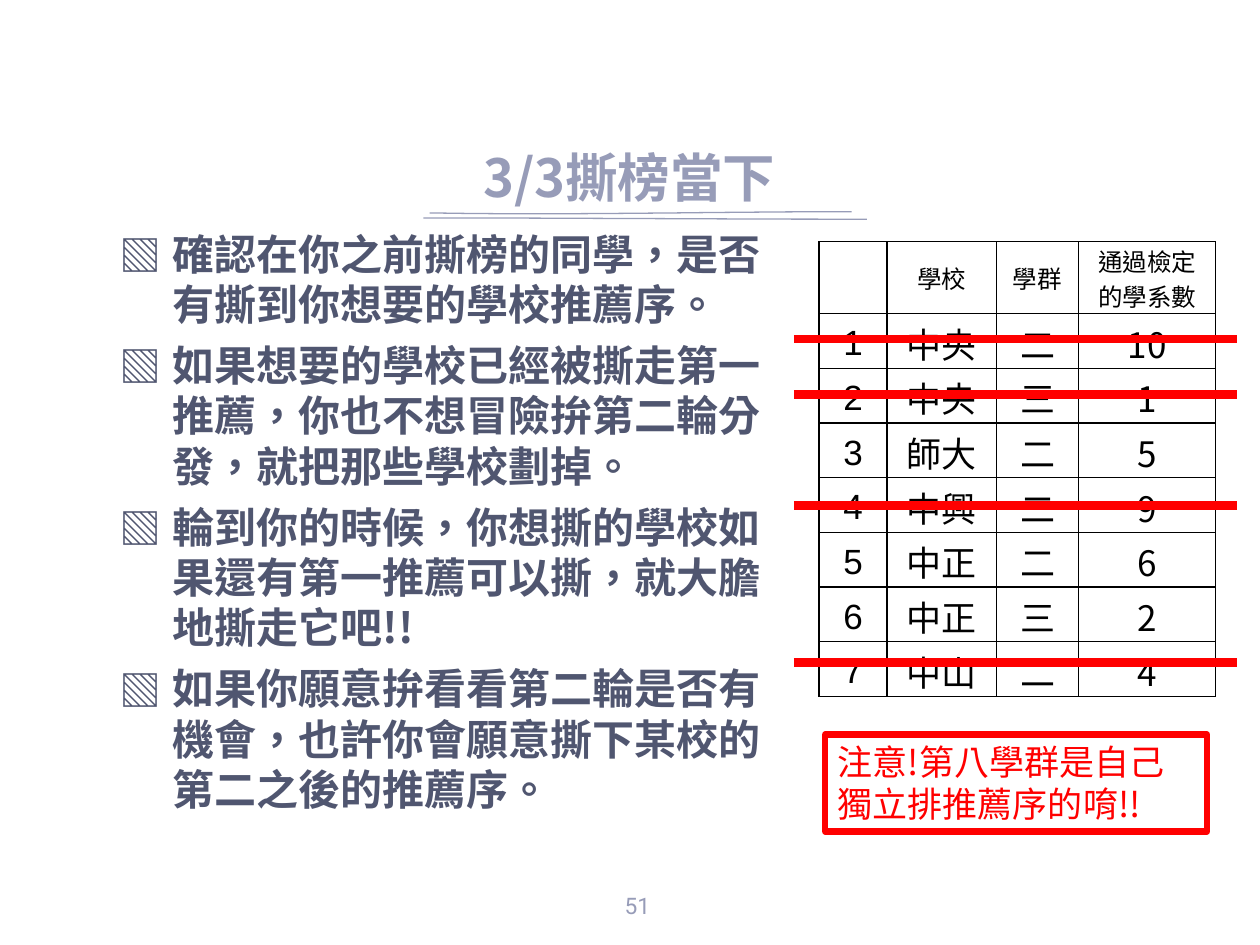
from dataclasses import dataclass

from lxml.etree import SubElement
from pptx import Presentation
from pptx.dml.color import RGBColor
from pptx.enum.shapes import MSO_CONNECTOR, MSO_SHAPE
from pptx.enum.text import MSO_ANCHOR, PP_ALIGN
from pptx.oxml.ns import qn
from pptx.util import Inches, Pt


@dataclass(frozen=True)
class Theme:
    accent: str = "979CB8"
    body: str = "505670"
    ink: str = "000000"
    paper: str = "FFFFFF"
    alert: str = "FF0000"
    cjk: str = "Noto Sans CJK SC"
    latin: str = "Arial"
    number: str = "Roboto"
    title_size: float = 30
    body_size: float = 24
    cell_size: float = 20
    head_size: float = 14
    page_size: float = 13


THEME = Theme()
BULLETS = [
    "確認在你之前撕榜的同學，是否有撕到你想要的學校推薦序。",
    "如果想要的學校已經被撕走第一推薦，你也不想冒險拚第二輪分發，就把那些學校劃掉。",
    "輪到你的時候，你想撕的學校如果還有第一推薦可以撕，就大膽地撕走它吧!!",
    "如果你願意拚看看第二輪是否有機會，也許你會願意撕下某校的第二之後的推薦序。",
]
HEADER = ["", "學校", "學群", "通過檢定的學系數"]
SCHOOLS = [
    ("中央", "二", 10), ("中央", "三", 1), ("師大", "二", 5), ("中興", "二", 9),
    ("中正", "二", 6), ("中正", "三", 2), ("中山", "二", 4),
]
COL_WIDTHS = [0.54, 0.87, 0.65, 1.09]
TABLE_HEIGHT, HEAD_HEIGHT = 3.6, 0.57
ROW_HEIGHT = (TABLE_HEIGHT - HEAD_HEIGHT) / len(SCHOOLS)
STRIKE_YS = [2.69, 3.13, 4.01, 5.26]


def write(p, text, size, color, font=THEME.cjk, bold=False,
          align=PP_ALIGN.LEFT, leading=None, before=0):
    """Fill one paragraph; leading is an exact line height in points."""
    p.alignment = align
    p.space_before = Pt(before)
    p.space_after = Pt(0)
    if leading:
        p.line_spacing = Pt(leading)
    r = p.add_run()
    r.text = text
    r.font.size, r.font.bold, r.font.name = Pt(size), bold, font
    r.font.color.rgb = RGBColor.from_string(color)
    r.font._element.set("lang", "zh-TW")
    if font == THEME.cjk:
        SubElement(r.font._element, qn("a:ea"), typeface=font)


def add_bullet(p, char, color):
    pPr = p._p.get_or_add_pPr()
    pPr.set("marL", str(Inches(0.5)))
    pPr.set("indent", str(Inches(-0.42)))
    clr = SubElement(pPr, qn("a:buClr"))
    SubElement(clr, qn("a:srgbClr"), val=color)
    SubElement(pPr, qn("a:buFont"), typeface=THEME.cjk)
    SubElement(pPr, qn("a:buChar"), char=char)


def set_border(cell, side, width):
    ln = SubElement(cell._tc.get_or_add_tcPr(), qn(f"a:ln{side}"), w=str(Pt(width)))
    fill = SubElement(ln, qn("a:solidFill"))
    SubElement(fill, qn("a:srgbClr"), val=THEME.ink)


def set_frame(tf, anchor, margins):
    tf.word_wrap = True
    tf.vertical_anchor = anchor
    tf.margin_left = tf.margin_right = Inches(margins[0])
    tf.margin_top = tf.margin_bottom = Inches(margins[1])


def place(sp, left, top, width, height):
    sp.left, sp.top = Inches(left), Inches(top)
    sp.width, sp.height = Inches(width), Inches(height)


class SlideBuilder:
    def __init__(self, prs, theme):
        self.s = prs.slides.add_slide(prs.slide_layouts[1])
        self.t = theme
        for sp in list(self.s.placeholders)[2:]:
            sp._element.getparent().remove(sp._element)

    def curve(self, *controls):
        """Draw a thin cubic curve through sampled points."""
        steps = 12
        points = []
        for i in range(steps + 1):
            u = i / steps
            weights = ((1 - u) ** 3, 3 * u * (1 - u) ** 2, 3 * u * u * (1 - u), u ** 3)
            points.append(tuple(Inches(sum(w * c[k] for w, c in zip(weights, controls)))
                                for k in (0, 1)))
        fb = self.s.shapes.build_freeform(*points[0])
        fb.add_line_segments(points[1:], close=False)
        sp = fb.convert_to_shape()
        sp.shadow.inherit = False
        sp.fill.background()
        sp.line.color.rgb = RGBColor.from_string(self.t.accent)
        sp.line.width = Pt(0.75)

    def title(self, text, *box):
        sp = self.s.shapes.title
        place(sp, *box)
        set_frame(sp.text_frame, MSO_ANCHOR.BOTTOM, (0.1, 0.1))
        write(sp.text_frame.paragraphs[0], text, self.t.title_size, self.t.accent,
              bold=True, align=PP_ALIGN.CENTER, leading=self.t.title_size * 1.2)

    def bullets(self, items, *box):
        sp = self.s.placeholders[1]
        place(sp, *box)
        tf = sp.text_frame
        set_frame(tf, MSO_ANCHOR.TOP, (0.1, 0.05))
        for i, text in enumerate(items):
            p = tf.add_paragraph() if i else tf.paragraphs[0]
            add_bullet(p, "▧", self.t.body)
            write(p, text, self.t.body_size, self.t.body, bold=True,
                  leading=self.t.body_size * 1.2, before=6 if i else 0)

    def page_number(self, text, *box):
        sp = self.s.shapes.add_textbox(*map(Inches, box))
        set_frame(sp.text_frame, MSO_ANCHOR.TOP, (0.1, 0.1))
        write(sp.text_frame.paragraphs[0], text, self.t.page_size, self.t.accent,
              font=self.t.number, align=PP_ALIGN.CENTER)

    def table(self, rows, left, top):
        tbl = self.s.shapes.add_table(len(rows), len(COL_WIDTHS), Inches(left), Inches(top),
                                      Inches(sum(COL_WIDTHS)), Inches(TABLE_HEIGHT)).table
        tbl.first_row = tbl.horz_banding = False
        for col, width in zip(tbl.columns, COL_WIDTHS):
            col.width = Inches(width)
        for i, values in enumerate(rows):
            tbl.rows[i].height = Inches(ROW_HEIGHT if i else HEAD_HEIGHT)
            for j, value in enumerate(values):
                self.cell(tbl.cell(i, j), str(value), i == 0, j)

    def cell(self, cell, text, is_head, col):
        for side in "LRTB":
            thick = (side, col) in (("R", 2), ("L", 3))
            set_border(cell, side, 1 if thick else 0.75)
        cell.fill.solid()
        cell.fill.fore_color.rgb = RGBColor.from_string(self.t.paper)
        cell.vertical_anchor = MSO_ANCHOR.MIDDLE
        is_rank = col == 0 and not is_head
        top = 0.01 if is_head else 0.04 if is_rank else 0.1
        cell.margin_top, cell.margin_bottom = Inches(top), Inches(0)
        size = self.t.head_size if is_head else self.t.cell_size
        leading = 20 if is_head else None if is_rank else 24
        write(cell.text_frame.paragraphs[0], text, size, self.t.ink,
              font=self.t.latin if is_head or is_rank else self.t.cjk,
              align=PP_ALIGN.CENTER, leading=leading)

    def strike(self, y):
        ln = self.s.shapes.add_connector(MSO_CONNECTOR.STRAIGHT, Inches(6.3), Inches(y),
                                         Inches(9.82), Inches(y))
        ln.line.color.rgb = RGBColor.from_string(self.t.alert)
        ln.line.width = Pt(5)
        SubElement(ln._element.spPr, qn("a:effectLst"))

    def notice(self, text, *box):
        sp = self.s.shapes.add_shape(MSO_SHAPE.RECTANGLE, *map(Inches, box))
        sp.shadow.inherit = False
        sp.fill.solid()
        sp.fill.fore_color.rgb = RGBColor.from_string(self.t.paper)
        sp.line.color.rgb = RGBColor.from_string(self.t.alert)
        sp.line.width = Pt(3.5)
        SubElement(sp.line._get_or_add_ln(), qn("a:round"))
        set_frame(sp.text_frame, MSO_ANCHOR.TOP, (0.1, 0.05))
        write(sp.text_frame.paragraphs[0], text, self.t.cell_size, self.t.alert,
              leading=self.t.cell_size * 1.2)


def main():
    prs = Presentation()
    prs.slide_width, prs.slide_height = Inches(10), Inches(7.5)
    slide = SlideBuilder(prs, THEME)
    slide.curve((3.41, 1.69), (4.53, 1.71), (5.64, 1.68), (6.76, 1.68))
    slide.curve((3.36, 1.73), (4.53, 1.73), (5.71, 1.74), (6.88, 1.74))
    slide.title("3/3撕榜當下", 1.12, 0.75, 7.75, 1)
    slide.page_number("51", 4.76, 6.98, 0.6, 0.44)
    slide.bullets(BULLETS, 0.77, 1.76, 5.53, 4.8)
    slide.table([HEADER] + [(n, *row) for n, row in enumerate(SCHOOLS, 1)], 6.5, 1.92)
    for y in STRIKE_YS:
        slide.strike(y)
    slide.notice("注意!第八學群是自己獨立排推薦序的唷!!", 6.55, 5.83, 3.03, 0.77)
    prs.save("out.pptx")


if __name__ == "__main__":
    main()
